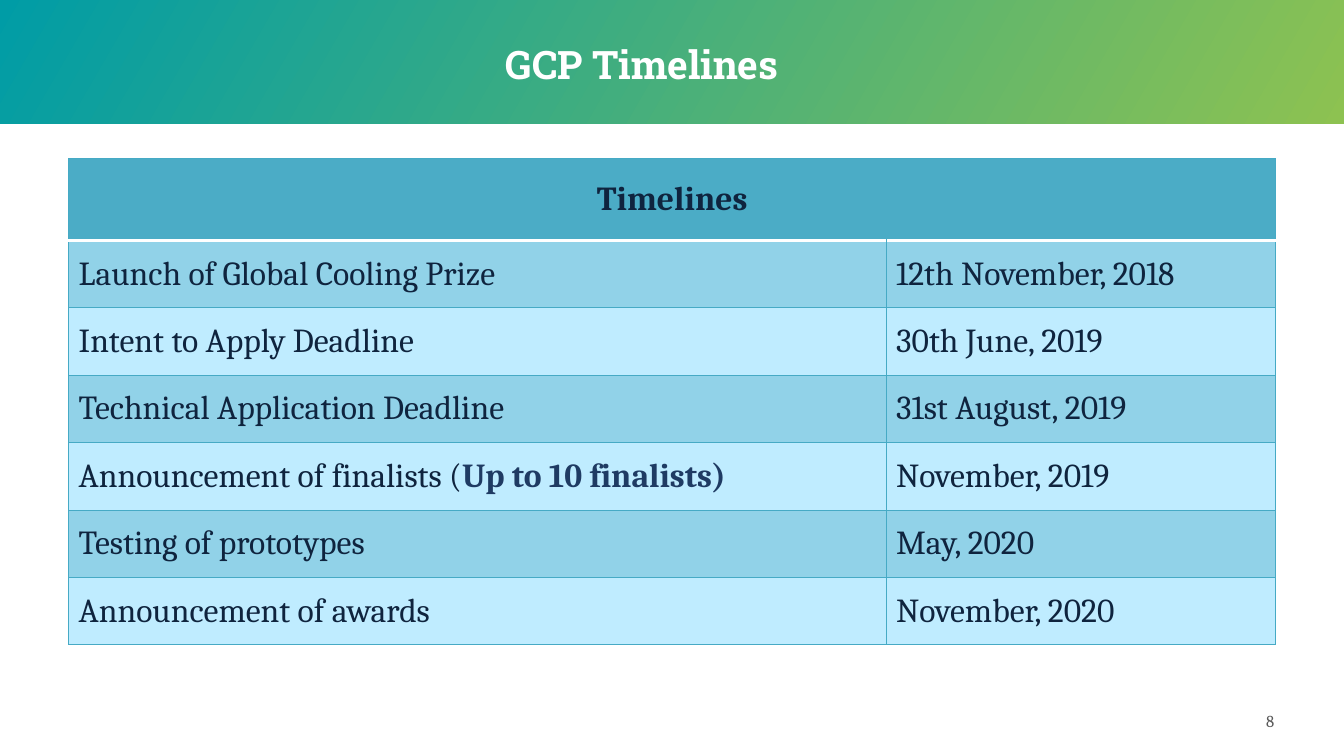
import pptx
import pptx.dml.color
import pptx.enum.shapes
import pptx.enum.text
import pptx.oxml
import pptx.oxml.ns
import pptx.util
from pptx.util import Cm

INK = "0F243E"
GRID = "46AAC5"
BANDS = ["91D2E8", "BFECFF"]
MILESTONES = [
    (["Launch of Global Cooling Prize"], "12th November, 2018"),
    (["Intent to Apply Deadline"], "30th June, 2019"),
    (["Technical Application Deadline"], "31st August, 2019"),
    (["Announcement of finalists (", "Up to 10 finalists)"], "November, 2019"),
    (["Testing of prototypes"], "May, 2020"),
    (["Announcement of awards"], "November, 2020"),
]


def rgb(value):
    return pptx.dml.color.RGBColor.from_string(value)


def style(run, size, color, bold=False, font="Cambria"):
    run.font.name = font
    run.font.size = pptx.util.Pt(size)
    run.font.bold = bold
    run.font.color.rgb = rgb(color)


def add_line(slide, box, text, anchor, align):
    frame = slide.shapes.add_textbox(*box).text_frame
    frame.word_wrap = True
    frame.vertical_anchor = anchor
    frame.text = text
    paragraph = frame.paragraphs[0]
    paragraph.alignment = align
    return paragraph


def add_header(slide, left, top, width, height):
    banner = slide.shapes.add_shape(
        pptx.enum.shapes.MSO_SHAPE.RECTANGLE, left, top, width, height)
    banner.shadow.inherit = False
    banner.line.fill.background()
    banner.fill.gradient()
    banner.fill.gradient_angle = 330
    for stop, color in zip(banner.fill.gradient_stops, ["009CA6", "8DC251"]):
        stop.color.rgb = rgb(color)
    title = add_line(
        slide, (left + Cm(12.5), top + Cm(0.84), Cm(9.55), Cm(1.5)),
        "GCP Timelines", pptx.enum.text.MSO_ANCHOR.BOTTOM,
        pptx.enum.text.PP_ALIGN.LEFT)
    title.line_spacing = 0.9
    style(title.runs[0], 28, "FFFFFF", True, "Roboto Slab")


def set_borders(cell, **special):
    properties = cell._tc.get_or_add_tcPr()
    for side in "LRTB":
        color, points = special.get(side, (GRID, 0.75))
        properties.append(pptx.oxml.parse_xml(
            f'<a:ln{side} {pptx.oxml.ns.nsdecls("a")} w="{pptx.util.Pt(points)}">'
            f'<a:solidFill><a:srgbClr val="{color}"/></a:solidFill></a:ln{side}>'))


def fill_cell(cell, parts, color, **special):
    set_borders(cell, **special)
    cell.fill.solid()
    cell.fill.fore_color.rgb = rgb(color)
    cell.vertical_anchor = pptx.enum.text.MSO_ANCHOR.MIDDLE
    paragraph = cell.text_frame.paragraphs[0]
    for part in parts:
        run = paragraph.add_run()
        run.text = part
        style(run, 24, INK)
    return paragraph


def add_timeline(slide, left, top, width, height):
    table = slide.shapes.add_table(
        len(MILESTONES) + 1, 2, left, top, width, height).table
    table.columns[0].width = Cm(20.6)
    table.columns[1].width = width - Cm(20.6)
    table.rows[0].height = Cm(2.06)
    divider = ("FFFFFF", 2)
    heading_cell = table.cell(0, 0)
    heading_cell.merge(table.cell(0, 1))
    heading = fill_cell(heading_cell, ["Timelines"], "4BACC6", B=divider)
    heading.alignment = pptx.enum.text.PP_ALIGN.CENTER
    heading.runs[0].font.bold = True
    fill_cell(table.cell(0, 1), [], "4BACC6", B=divider)

    for index, (event, date) in enumerate(MILESTONES):
        row = index + 1
        table.rows[row].height = int((height - Cm(2.06)) / len(MILESTONES))
        special = {"T": divider} if index == 0 else {}
        band = BANDS[index % 2]
        label = fill_cell(table.cell(row, 0), event, band, **special)
        for emphasis in label.runs[1:]:
            style(emphasis, 24, "1F3B63", True)
        fill_cell(table.cell(row, 1), [date], band, **special)


def add_page_number(slide, left, top, width, height):
    number = add_line(
        slide, (left, top, width, height), "8",
        pptx.enum.text.MSO_ANCHOR.MIDDLE, pptx.enum.text.PP_ALIGN.RIGHT)
    style(number.runs[0], 12, "595959")


def main():
    deck = pptx.Presentation()
    deck.slide_width = Cm(33.87)
    deck.slide_height = Cm(19.05)
    slide = deck.slides.add_slide(deck.slide_layouts[6])
    add_header(slide, 0, 0, deck.slide_width, Cm(3.12))
    add_page_number(slide, Cm(26.64), Cm(17.65), Cm(5.72), Cm(1.02))
    add_timeline(slide, Cm(1.73), Cm(4), Cm(30.42), Cm(12.25))
    deck.save("out.pptx")


if __name__ == "__main__":
    main()
